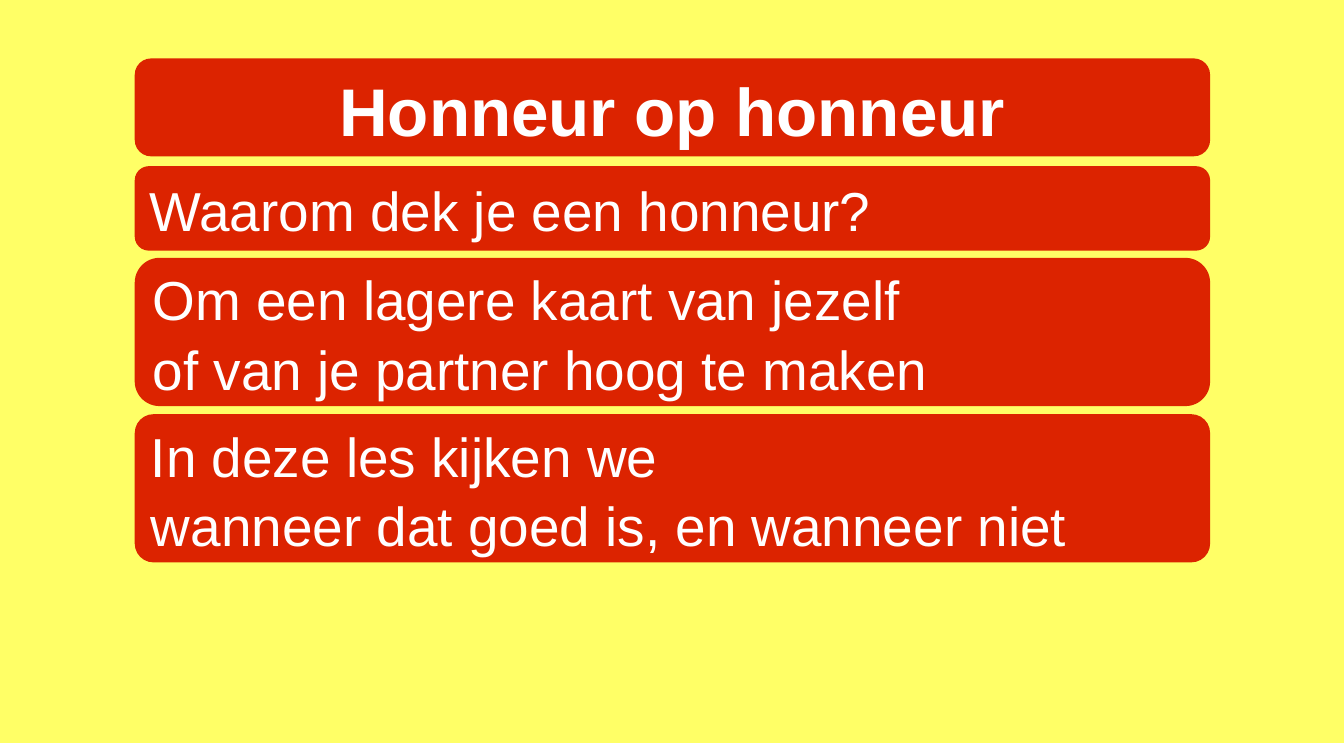
"""Build the opening slide of a bridge lesson on covering an honour."""
import dataclasses

import pptx
import pptx.dml.color
import pptx.enum.shapes
import pptx.enum.text
import pptx.util

Inches = pptx.util.Inches


@dataclasses.dataclass(frozen=True)
class Theme:
    """Colours, font and type sizes of the lesson."""
    background: str = "FFFF66"
    panel: str = "DC2300"
    text: str = "FFFFFF"
    font: str = "Arial"
    title_size: int = 54
    body_size: int = 44
    line_spacing: float = 1.05


class LessonSlide:
    """Draw lesson elements on one slide in a shared style."""
    LEFT, WIDTH = 1.5, 11.97

    def __init__(self, deck, theme):
        """Add a title-only slide with a plain background."""
        self.theme = theme
        self.slide = deck.slides.add_slide(deck.slide_layouts[5])
        self.paint(self.slide.background.fill, theme.background)

    def paint(self, fill, colour):
        """Make a fill solid in the given colour."""
        fill.solid()
        fill.fore_color.rgb = pptx.dml.color.RGBColor.from_string(colour)

    def set_lines(self, box, lines, size, align, bold=False):
        """Set the lines of a box, one paragraph each."""
        frame = box.text_frame
        frame.text = "\n".join(lines)
        frame.word_wrap = True
        frame.auto_size = pptx.enum.text.MSO_AUTO_SIZE.NONE
        frame.vertical_anchor = pptx.enum.text.MSO_ANCHOR.MIDDLE
        frame.margin_left = frame.margin_right = Inches(0.12)
        frame.margin_top = frame.margin_bottom = Inches(0.06)
        for para in frame.paragraphs:
            para.alignment = align
            para.line_spacing = self.theme.line_spacing
            for span in para.runs:
                span.font.name = self.theme.font
                span.font.size = pptx.util.Pt(size)
                span.font.bold = bold
                span.font.color.rgb = pptx.dml.color.RGBColor.from_string(self.theme.text)

    def panel(self, top, height, rounding=0.167):
        """Add a full-width rounded panel."""
        box = self.slide.shapes.add_shape(
            pptx.enum.shapes.MSO_SHAPE.ROUNDED_RECTANGLE,
            Inches(self.LEFT), Inches(top), Inches(self.WIDTH), Inches(height))
        box.adjustments[0] = rounding
        box.shadow.inherit = False
        box.line.fill.background()
        self.paint(box.fill, self.theme.panel)
        return box

    def title(self, text, top, height):
        """Place the title placeholder in front of its panel."""
        panel = self.panel(top, height)
        title = self.slide.shapes.title
        title.left, title.top = panel.left, panel.top
        title.width, title.height = panel.width, panel.height
        panel._element.addnext(title._element)
        self.set_lines(title, [text], self.theme.title_size,
                       pptx.enum.text.PP_ALIGN.CENTER, bold=True)

    def statement(self, lines, top, height, rounding=0.167):
        """Add a panel with left-aligned text."""
        self.set_lines(self.panel(top, height, rounding), lines,
                       self.theme.body_size, pptx.enum.text.PP_ALIGN.LEFT)


def main():
    """Build and save the lesson slide."""
    deck = pptx.Presentation()
    deck.slide_width, deck.slide_height = Inches(14.96), Inches(8.27)
    lesson = LessonSlide(deck, Theme())
    lesson.title("Honneur op honneur", 0.65, 1.09)
    lesson.statement(["Waarom dek je een honneur?"], 1.85, 0.94)
    lesson.statement(["Om een lagere kaart van jezelf",
                      "of van je partner hoog te maken"], 2.87, 1.65)
    lesson.statement(["In deze les kijken we",
                      "wanneer dat goed is, en wanneer niet"], 4.61, 1.65, 0.127)
    deck.save("out.pptx")


if __name__ == "__main__":
    main()
